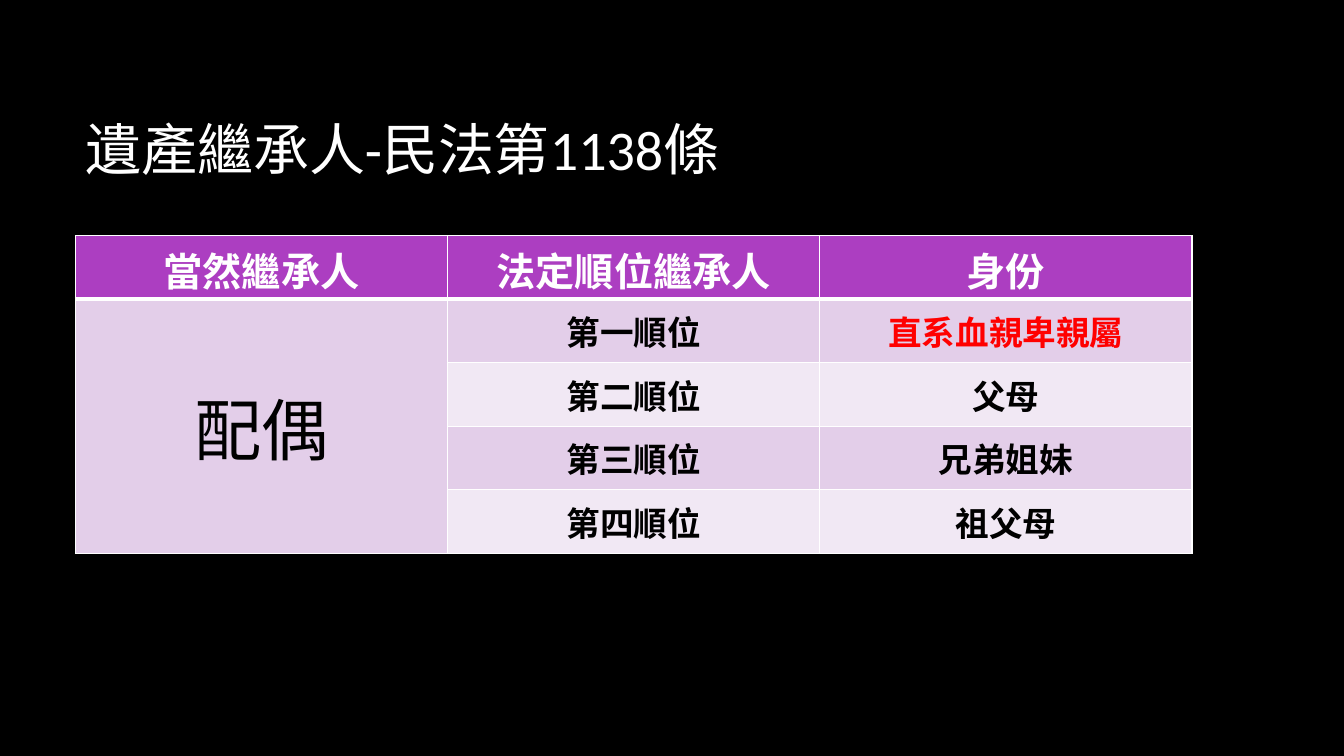
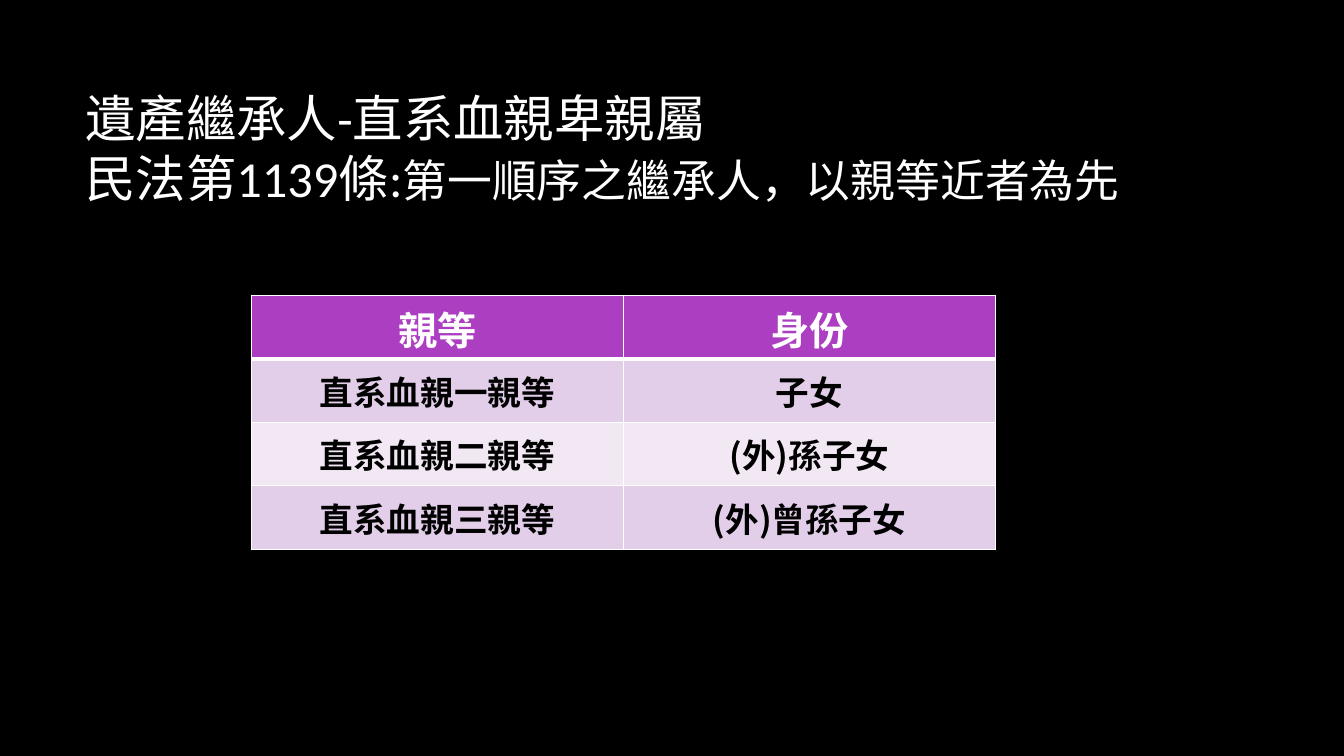
from lxml import etree
from pptx import Presentation
from pptx import util as u
from pptx.dml.color import RGBColor
from pptx.enum import text as t
from pptx.oxml import ns

BLACK = RGBColor(0x00, 0x00, 0x00)
WHITE = RGBColor(0xFF, 0xFF, 0xFF)
RED = RGBColor(0xFF, 0x00, 0x00)
PURPLE = RGBColor(0xAC, 0x3E, 0xC1)
BANDS = [RGBColor(0xF1, 0xE8, 0xF4), RGBColor(0xE3, 0xCE, 0xE9)]

TITLE_FONT = "Calibri"
TABLE_FONT = "Noto Sans CJK TC"
COLUMN_WIDTH = u.Cm(9.38)
ROW_HEIGHT = u.Cm(1.6)

HEADER = {"size": u.Pt(28), "bold": True, "color": WHITE}
BODY = {"size": u.Pt(24), "bold": True, "color": BLACK}
SPECIAL = {
    "配偶": {"size": u.Pt(48), "bold": False},
    "直系血親卑親屬": {"color": RED},
}

SLIDES = [
    {
        "title": [[("遺產繼承人-民法第1138條", 40)]],
        "left": u.Cm(1.9),
        "top": u.Cm(5.94),
        "rows": [
            ["當然繼承人", "法定順位繼承人", "身份"],
            ["配偶", "第一順位", "直系血親卑親屬"],
            ["", "第二順位", "父母"],
            ["", "第三順位", "兄弟姐妹"],
            ["", "第四順位", "祖父母"],
        ],
        "merge": ((1, 0), (4, 0)),
    },
    {
        "title": [
            [("遺產繼承人-直系血親卑親屬", 36)],
            [("民法第1139條:", 36), ("第一順序之繼承人，以親等近者為先", 32)],
        ],
        "left": u.Cm(6.33),
        "top": u.Cm(7.44),
        "rows": [
            ["親等", "身份"],
            ["直系血親一親等", "子女"],
            ["直系血親二親等", "(外)孫子女"],
            ["直系血親三親等", "(外)曾孫子女"],
        ],
        "merge": None,
    },
]


def add_text(paragraph, words, typeface, style):
    run = paragraph.add_run()
    run.text = words
    run.font.name = typeface
    for key, value in style.items():
        if key == "color":
            run.font.color.rgb = value
        else:
            setattr(run.font, key, value)
    east_asian = etree.SubElement(run.font._element, ns.qn("a:ea"))
    east_asian.set("typeface", typeface)


def add_border(cell, side, width):
    properties = cell._tc.get_or_add_tcPr()
    line = etree.SubElement(properties, ns.qn("a:ln" + side), w=str(u.Pt(width)))
    fill = etree.SubElement(line, ns.qn("a:solidFill"))
    etree.SubElement(fill, ns.qn("a:srgbClr"), val=str(WHITE))


prs = Presentation()
prs.slide_width = u.Cm(33.87)
prs.slide_height = u.Cm(19.05)
background = prs.slide_master.background.fill
background.solid()
background.fore_color.rgb = BLACK

for content in SLIDES:
    slide = prs.slides.add_slide(prs.slide_layouts[6])

    heading = slide.shapes.add_textbox(u.Cm(1.9), u.Cm(1.7), u.Cm(28.14), u.Cm(4.04))
    frame = heading.text_frame
    frame.word_wrap = True
    frame.vertical_anchor = t.MSO_ANCHOR.MIDDLE
    title = frame.paragraphs[0]
    for number, title_line in enumerate(content["title"]):
        if number:
            title.add_line_break()
        for words, size in title_line:
            add_text(title, words, TITLE_FONT, {"size": u.Pt(size), "color": WHITE})

    rows = content["rows"]
    row_count, column_count = len(rows), len(rows[0])
    heirs = slide.shapes.add_table(
        row_count, column_count, content["left"], content["top"],
        COLUMN_WIDTH * column_count, ROW_HEIGHT * row_count,
    ).table
    for column in heirs.columns:
        column.width = COLUMN_WIDTH
    for row in heirs.rows:
        row.height = ROW_HEIGHT

    for r, row_words in enumerate(rows):
        for c, words in enumerate(row_words):
            cell = heirs.cell(r, c)
            cell.vertical_anchor = t.MSO_ANCHOR.MIDDLE
            widths = {"L": 1, "R": 1, "T": 3 if r == 1 else 1, "B": 3 if r == 0 else 1}
            for side, width in widths.items():
                add_border(cell, side, width)
            cell.fill.solid()
            cell.fill.fore_color.rgb = BANDS[r % 2] if r else PURPLE
            paragraph = cell.text_frame.paragraphs[0]
            paragraph.alignment = t.PP_ALIGN.CENTER
            if words:
                style = {**BODY, **SPECIAL.get(words, {})} if r else HEADER
                add_text(paragraph, words, TABLE_FONT, style)

    if content["merge"]:
        first, last = content["merge"]
        heirs.cell(*first).merge(heirs.cell(*last))

prs.save("out.pptx")
